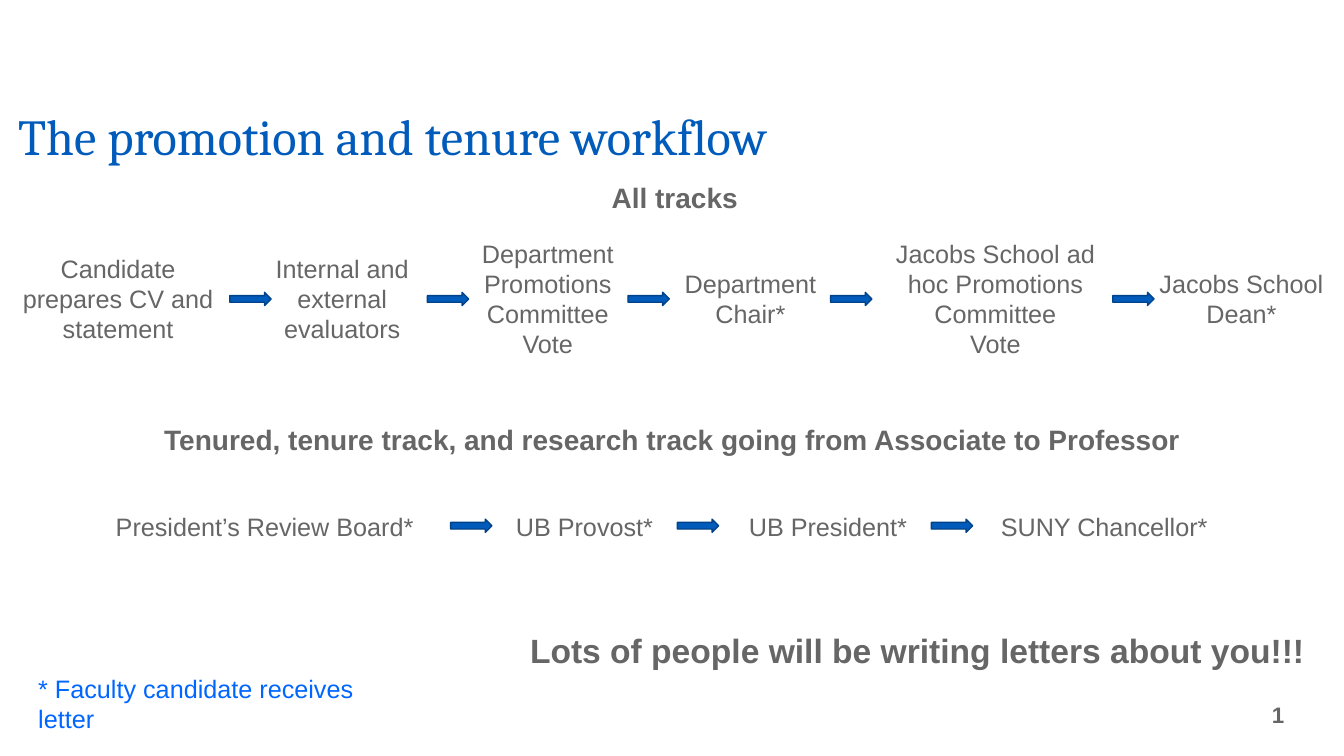
from pptx import Presentation
from pptx.dml.color import RGBColor
from pptx.enum.shapes import MSO_SHAPE
from pptx.enum.text import MSO_ANCHOR, PP_ALIGN
from pptx.oxml.ns import qn
from pptx.util import Pt

COLORS = {"blue": "005BBB", "edge": "00438A", "gray": "666666", "note": "0066FF"}

STEPS = [
    ("Candidate prepares CV and statement", 5.8, 157, 3),
    ("Internal and external evaluators", 172.8, 143.3, 3),
    ("Department Promotions Committee\nVote", 302.4, 177.8, 4),
    ("Department Chair*", 478.1, 115.9, 2),
    ("Jacobs School ad hoc Promotions Committee\nVote", 630, 162, 4),
    ("Jacobs School Dean*", 812.2, 149, 2),
]
BOARDS = [
    ("President’s Review Board*", 75.6, 232.6),
    ("UB Provost*", 361.4, 113.8),
    ("UB President*", 527.8, 128.9),
    ("SUNY Chancellor*", 707.8, 163.4),
]
ARROWS = {213.5: [178.9, 320, 463.3, 608, 809.6], 375.5: [336.6, 498.6, 680]}


class Flow:
    """Draws the text and arrows of a workflow slide, in points."""

    def __init__(self, slide):
        self.slide = slide

    def color(self, name):
        return RGBColor.from_string(COLORS[name])

    def text(self, words, left, top, width, height, size=18, bold=False,
             font="Arial", color="gray", align=PP_ALIGN.LEFT, wrap=False):
        box = self.slide.shapes.add_textbox(Pt(left), Pt(top), Pt(width), Pt(height))
        frame = box.text_frame
        frame.word_wrap = wrap
        frame.text = words
        style = {"name": font, "size": Pt(size), "bold": bold}
        for para in frame.paragraphs:
            para.alignment = align
            for run in para.runs:
                for key, value in style.items():
                    setattr(run.font, key, value)
                run.font.color.rgb = self.color(color)
        return frame

    def step(self, words, left, width, lines, mid):
        height = 7.2 + 21.7 * lines
        self.text(words, left, mid - height / 2, width, height,
                  align=PP_ALIGN.CENTER, wrap=True)

    def arrow(self, x, y, width=9.4, length=29.5):
        shape = self.slide.shapes.add_shape(
            MSO_SHAPE.DOWN_ARROW, Pt(x - width / 2), Pt(y - length / 2),
            Pt(width), Pt(length))
        shape.rotation = 270
        shape.shadow.inherit = False
        shape.fill.solid()
        shape.fill.fore_color.rgb = self.color("blue")
        shape.line.color.rgb = self.color("edge")
        shape.line.width = Pt(1)

    def number(self, words, left, top, width, height):
        frame = self.text(words, left, top, width, height, size=16, bold=True,
                          align=PP_ALIGN.RIGHT, wrap=True)
        frame.vertical_anchor = MSO_ANCHOR.MIDDLE
        frame.margin_left = frame.margin_right = Pt(9.4)
        field = frame.paragraphs[0].runs[0]._r
        field.tag = qn("a:fld")
        field.set("id", "{B6F15528-21DE-4FAA-801E-634DDDAF4B2B}")
        field.set("type", "slidenum")


def main():
    deck = Presentation()
    deck.slide_width, deck.slide_height = Pt(960), Pt(540)
    flow = Flow(deck.slides.add_slide(deck.slide_layouts[6]))

    title = flow.text("The promotion and tenure workflow", 5.8, 76.3, 828, 56.2,
                      size=36, font="Cambria", color="blue", wrap=True)
    title.paragraphs[0].line_spacing = 0.9
    flow.text("All tracks", 429.8, 125.3, 105.1, 31.7, size=20, bold=True)
    for words, left, width, lines in STEPS:
        flow.step(words, left, width, lines, 213.5)
    flow.text("Tenured, tenure track, and research track going from Associate to Professor",
              110.2, 298.1, 745.9, 31.7, size=20, bold=True)
    for words, left, width in BOARDS:
        flow.text(words, left, 361.4, width, 28.8)
    for y, row in ARROWS.items():
        for x in row:
            flow.arrow(x, y)
    flow.text("* Faculty candidate receives letter", 20.2, 477.4, 265.7, 28.8,
              color="note", wrap=True)
    flow.text("Lots of people will be writing letters about you!!!",
              371.5, 446.4, 572.4, 36, size=24, bold=True)
    flow.number("3", 869.8, 489.6, 56.9, 41.8)
    deck.save("out.pptx")


if __name__ == "__main__":
    main()
